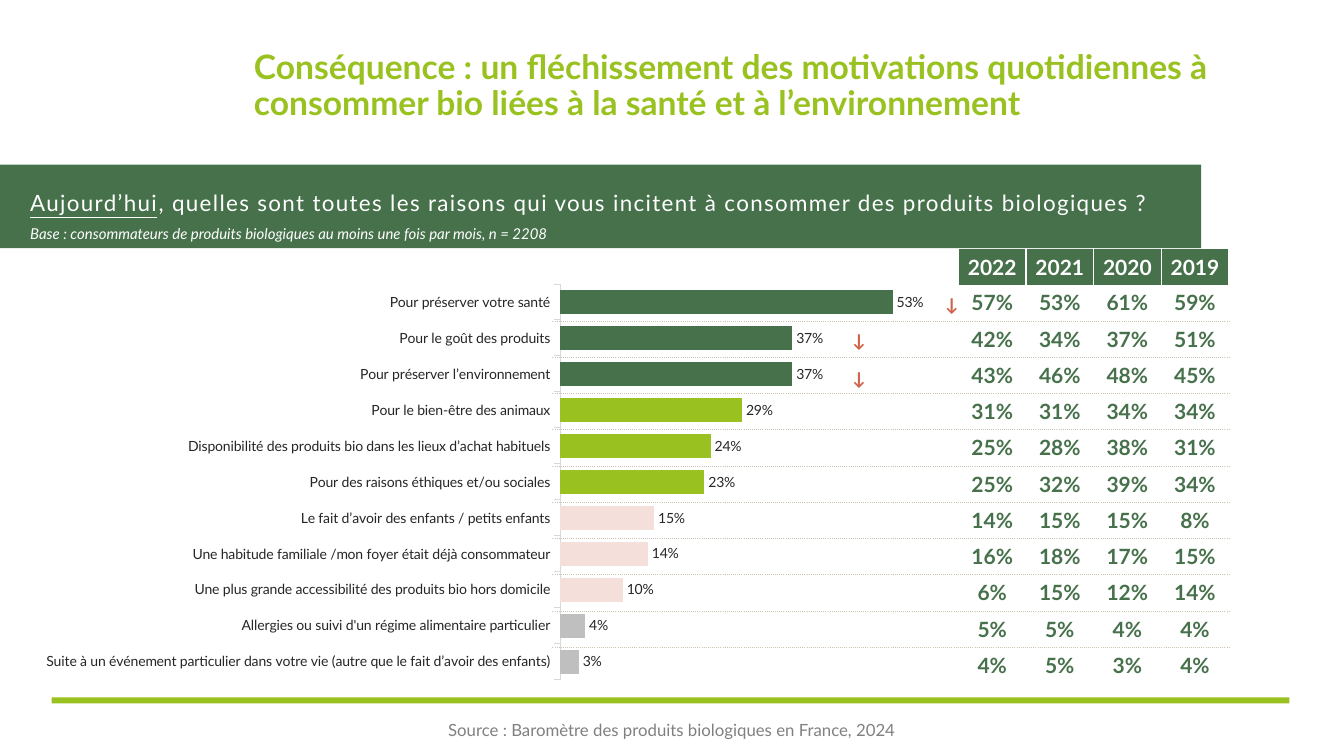
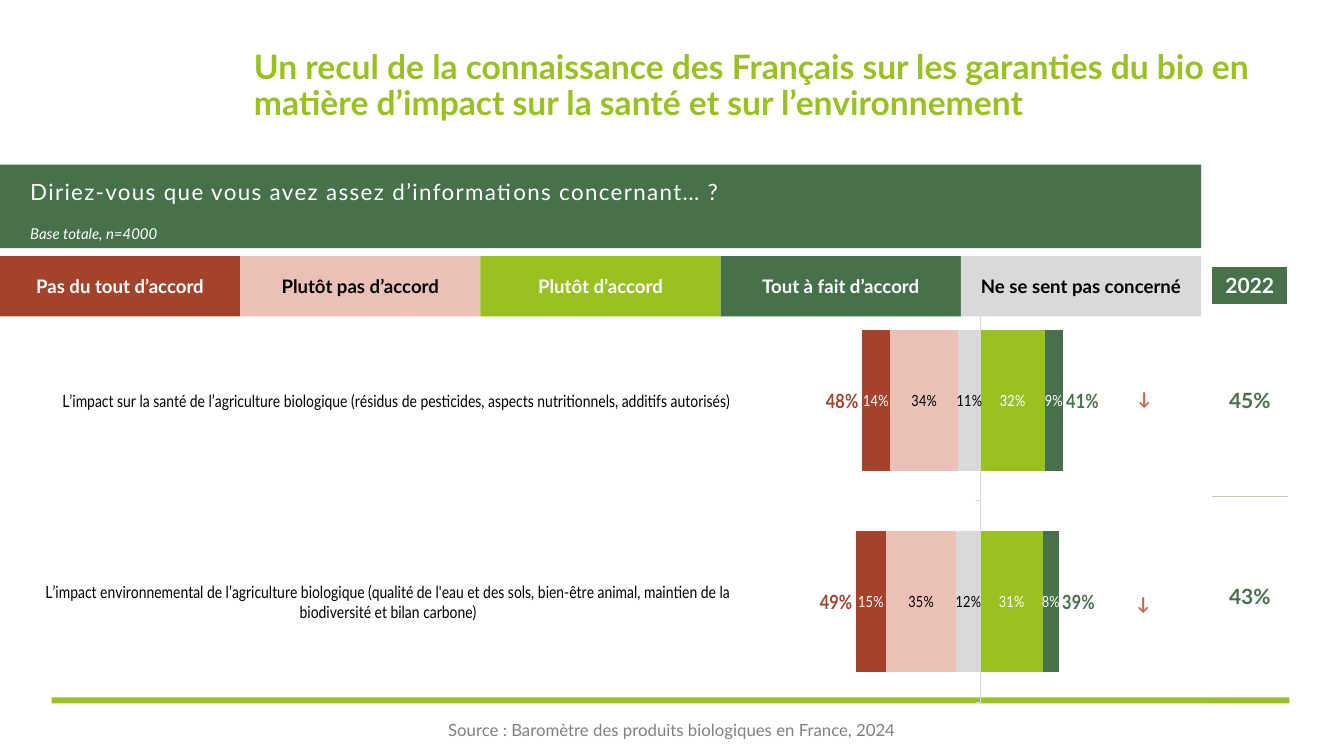
from dataclasses import dataclass
from pptx import Presentation
from pptx.chart.data import CategoryChartData as Data
from pptx.dml.color import RGBColor as RGB
from pptx.enum.chart import XL_CHART_TYPE as Kind, XL_LABEL_POSITION as Spot
from pptx.enum.chart import XL_TICK_LABEL_POSITION as Side, XL_TICK_MARK as Tick
from pptx.enum.shapes import MSO_SHAPE as Form
from pptx.enum.text import MSO_ANCHOR as Anchor, MSO_AUTO_SIZE as Fit, PP_ALIGN as Align
from pptx.oxml import parse_xml
from pptx.oxml.ns import nsdecls, qn
from pptx.util import Pt


@dataclass(frozen=True)
class Theme:
    font: str = "Lato"
    green: str = "46714B"
    lime: str = "99C221"
    rust: str = "A5422C"
    rose: str = "EBC0B6"
    blush: str = "F5DFDB"
    mist: str = "D9D9D9"
    grey: str = "BFBFBF"
    dim: str = "808080"
    ink: str = "262626"
    black: str = "000000"
    white: str = "FFFFFF"
    sand: str = "CFC3B6"
    red: str = "CE6149"
    head: float = 24
    ask: float = 16
    year: float = 15
    sum: float = 14
    tag: float = 13.3
    foot: float = 12
    bar: float = 11
    base: float = 10.7
    small: float = 10


T = Theme()


def style(font, size, hue, **more):
    font.color.rgb = RGB.from_string(hue)
    for key, val in {"name": T.font, "size": Pt(size), **more}.items():
        setattr(font, key, val)


def box(slide, area, runs=(), size=T.foot, hue=T.white, fill=None,
        align=Align.LEFT, gap=1.0, track=0, **more):
    area = [Pt(n) for n in area]
    if fill:
        shape = slide.shapes.add_shape(Form.RECTANGLE, *area)
        shape.shadow.inherit = False
        shape.fill.solid()
        shape.fill.fore_color.rgb = RGB.from_string(fill)
        shape.line.fill.background()
    else:
        shape = slide.shapes.add_textbox(*area)
    frame = shape.text_frame
    for key in ("margin_left", "margin_top", "margin_right", "margin_bottom"):
        setattr(frame, key, 0)
    frame.word_wrap = True
    frame.vertical_anchor = Anchor.MIDDLE
    para = frame.paragraphs[0]
    para.alignment = align
    para.line_spacing = gap
    for words, extra in runs:
        run = para.add_run()
        run.text = words
        style(run.font, size, hue, **{**more, **extra})
        if track:
            run.font._element.set("spc", str(track))


pages = [
    {
        "title": "Conséquence : un fléchissement des motivations quotidiennes à "
                 "consommer bio liées à la santé et à l’environnement",
        "ask": [("Aujourd’hui", {"underline": True}),
                (", quelles sont toutes les raisons qui vous incitent à "
                 "consommer des produits biologiques ?", {})],
        "top": 125.3,
        "base": "Base : consommateurs de produits biologiques au moins une fois "
                "par mois, n = 2208",
        "arrows": [(607.7, 234.7), (607.7, 262.1), (673.9, 209.5)],
        "tags": [],
        "chart": {
            "kind": Kind.BAR_CLUSTERED, "area": (0, 190.8, 689.8, 303.8),
            "plot": (0.58, 0.04, 0.39, 0.93), "low": 0, "high": 0.6,
            "gap": 50, "lap": 0, "flip": True, "side": Side.NEXT_TO_AXIS,
            "size": T.small, "ink": T.ink,
            "cats": [
                "Pour préserver votre santé",
                "Pour le goût des produits",
                "Pour préserver l’environnement",
                "Pour le bien-être des animaux",
                "Disponibilité des produits bio dans les lieux d’achat habituels",
                "Pour des raisons éthiques et/ou sociales",
                "Le fait d’avoir des enfants / petits enfants",
                "Une habitude familiale /mon foyer était déjà consommateur",
                "Une plus grande accessibilité des produits bio hors domicile",
                "Allergies ou suivi d'un régime alimentaire particulier",
                "Suite à un événement particulier dans votre vie "
                "(autre que le fait d’avoir des enfants)"],
            "rows": [
                ("2024", (0.53, 0.37, 0.37, 0.29, 0.24, 0.23, 0.15, 0.14, 0.1, 0.04, 0.03),
                 T.green, T.ink, T.small, Spot.OUTSIDE_END)],
            "hues": [T.green] * 3 + [T.lime] * 3 + [T.blush] * 3 + [T.grey] * 2,
        },
        "table": {
            "at": (394.6, 178.2), "cols": [290] + [48.3] * 4,
            "rows": [25.2] + [25.9] * 11,
            "line": (T.sand, 0.5, "sysDot"), "last": False,
            "cells": [["", "2022", "2021", "2020", "2019"]] + [
                [""] + [f"{n}%" for n in row] for row in (
                    (57, 53, 61, 59), (42, 34, 37, 51), (43, 46, 48, 45),
                    (31, 31, 34, 34), (25, 28, 38, 31), (25, 32, 39, 34),
                    (14, 15, 15, 8), (16, 18, 17, 15), (6, 15, 12, 14),
                    (5, 5, 4, 4), (4, 5, 3, 4))],
        },
    },
    {
        "title": "Un recul de la connaissance des Français sur les garanties du bio "
                 "en matière d’impact sur la santé et sur l’environnement",
        "ask": [("Diriez-vous que vous avez assez d’informations concernant… ?", {})],
        "top": 117.4,
        "base": "Base totale, n=4000",
        "arrows": [(811.4, 276.5), (810.7, 422.6)],
        "tags": [
            ("Pas du tout d’accord", T.rust, T.white),
            ("Plutôt pas d’accord", T.rose, T.black),
            ("Plutôt d’accord", T.lime, T.white),
            ("Tout à fait d’accord", T.green, T.white),
            ("Ne se sent pas concerné", T.mist, T.black)],
        "chart": {
            "kind": Kind.BAR_STACKED, "area": (32.4, 213.8, 847.4, 288),
            "plot": (0.5, 0, 0.49, 1), "low": -1.2, "high": 1.2,
            "gap": 43, "lap": 100, "flip": False, "side": Side.LOW,
            "size": T.foot, "ink": T.black,
            "cats": [
                "L’impact environnemental de l’agriculture biologique (qualité de "
                "l'eau et des sols, bien-être animal, maintien de la biodiversité "
                "et bilan carbone)",
                "L’impact sur la santé de l’agriculture biologique (résidus de "
                "pesticides, aspects nutritionnels, additifs autorisés)"],
            "rows": [
                ("Plutôt d’accord", (0.31, 0.32), T.lime, T.white, T.bar, Spot.CENTER),
                ("Tout à fait d’accord", (0.08, 0.09), T.green, T.white, T.bar, Spot.CENTER),
                ("Ne se sent pas concerné", (-0.12, -0.11), T.mist, T.black, T.bar, Spot.CENTER),
                ("Plutôt pas d’accord", (-0.35, -0.34), T.rose, T.black, T.bar, Spot.CENTER),
                ("Pas du tout d’accord", (-0.15, -0.14), T.rust, T.white, T.bar, Spot.CENTER),
                ("Total d’accord", (0.39, 0.41), None, T.green, T.sum, Spot.INSIDE_BASE),
                ("Total pas d’accord", (-0.49, -0.48), None, T.rust, T.sum, Spot.INSIDE_BASE)],
            "hues": [],
        },
        "table": {
            "at": (865.4, 191), "cols": [54.7], "rows": [26.2, 137.5, 143.3],
            "line": (T.sand, 1, "solid"), "last": True,
            "cells": [["2022"], ["45%"], ["43%"]],
        },
    },
]

deck = Presentation()
deck.slide_width, deck.slide_height = Pt(960), Pt(540)

for page in pages:
    slide = deck.slides.add_slide(deck.slide_layouts[5])
    title = slide.shapes.title
    place = {"left": 181.4, "top": 27.4, "width": 742.3, "height": 68.4}
    for key, val in place.items():
        setattr(title, key, Pt(val))
    frame = title.text_frame
    frame.text = page["title"]
    look = {"margin_left": 0, "margin_top": 0, "margin_right": 0, "margin_bottom": 0,
            "word_wrap": True, "auto_size": Fit.NONE, "vertical_anchor": Anchor.MIDDLE}
    for key, val in look.items():
        setattr(frame, key, val)
    para = frame.paragraphs[0]
    para.alignment, para.line_spacing = Align.LEFT, 0.9
    style(para.runs[0].font, T.head, T.lime, bold=True)

    box(slide, (0, 117.6, 858, 59.6), fill=T.green)
    box(slide, (36.8, 498.2, 884.2, 4.3), fill=T.lime)
    box(slide, (277.2, 502, 405.4, 38),
        [("Source : Baromètre des produits biologiques en France, 2024", {})],
        T.foot, T.dim, align=Align.CENTER)

    plan = page["chart"]
    data = Data(number_format="0%")
    data.categories = plan["cats"]
    for row in plan["rows"]:
        data.add_series(row[0], row[1])
    area = [Pt(n) for n in plan["area"]]
    chart = slide.shapes.add_chart(plan["kind"], *area, data).chart
    chart.has_title = chart.has_legend = False
    style(chart.font, T.small, plan["ink"])
    root = chart.element
    root.find(qn("c:chart")).addnext(parse_xml(
        f'<c:spPr {nsdecls("c", "a")}><a:noFill/><a:ln><a:noFill/></a:ln></c:spPr>'))
    field = root.find(".//" + qn("c:plotArea"))
    for old in field.findall(qn("c:layout")):
        field.remove(old)
    parts = "".join(f'<c:{k} val="{v}"/>' for k, v in zip("xywh", plan["plot"]))
    field.insert(0, parse_xml(
        f'<c:layout {nsdecls("c")}><c:manualLayout><c:layoutTarget val="inner"/>'
        f'<c:xMode val="edge"/><c:yMode val="edge"/>{parts}</c:manualLayout></c:layout>'))

    plot = chart.plots[0]
    bars = {"gap_width": plan["gap"], "overlap": plan["lap"], "vary_by_categories": False}
    scale = {"minimum_scale": plan["low"], "maximum_scale": plan["high"],
             "has_major_gridlines": False, "visible": False}
    names = {"reverse_order": plan["flip"], "major_tick_mark": Tick.OUTSIDE,
             "minor_tick_mark": Tick.NONE, "tick_label_position": plan["side"],
             "has_major_gridlines": False}
    axis = chart.category_axis
    for item, vals in ((plot, bars), (chart.value_axis, scale), (axis, names)):
        for key, val in vals.items():
            setattr(item, key, val)
    axis.format.line.width = Pt(0.75)
    axis.format.line.color.rgb = RGB.from_string(T.mist)
    style(axis.tick_labels.font, plan["size"], plan["ink"])

    for row, (name, vals, fill, hue, size, spot) in zip(plot.series, plan["rows"]):
        paint = row.format.fill
        if fill:
            paint.solid()
            paint.fore_color.rgb = RGB.from_string(fill)
        else:
            paint.background()
        marks = row.data_labels
        look = {"show_value": True, "number_format": "0%;0%",
                "number_format_is_linked": False, "position": spot}
        for key, val in look.items():
            setattr(marks, key, val)
        style(marks.font, size, hue, bold=not fill)
    for i, hue in enumerate(plan["hues"]):
        paint = plot.series[0].points[i].format.fill
        paint.solid()
        paint.fore_color.rgb = RGB.from_string(hue)

    for i, (words, fill, hue) in enumerate(page["tags"]):
        box(slide, (i * 171.6, 182.9, 171.6, 43.2), [(words, {})], T.tag, hue,
            fill, Align.CENTER, bold=True)

    plan = page["table"]
    cols, rows = plan["cols"], plan["rows"]
    area = [Pt(n) for n in (*plan["at"], sum(cols), sum(rows))]
    table = slide.shapes.add_table(len(rows), len(cols), *area).table
    table.first_row = table.horz_banding = False
    bare = table._tbl.tblPr.find(qn("a:tableStyleId"))
    bare.text = "{2D5ABB26-0587-4C30-8999-92F81FD0307C}"
    for col, wide in zip(table.columns, cols):
        col.width = Pt(wide)
    for r, tall in enumerate(rows):
        table.rows[r].height = Pt(tall)
        for c, words in enumerate(plan["cells"][r]):
            cell = table.cell(r, c)
            look = {"margin_left": 0, "margin_top": 0, "margin_right": 0,
                    "margin_bottom": 0, "vertical_anchor": Anchor.MIDDLE}
            for key, val in look.items():
                setattr(cell, key, val)
            cell.fill.background()
            edges = []
            if r == 0 and words:
                cell.fill.solid()
                cell.fill.fore_color.rgb = RGB.from_string(T.green)
                edges = [(side, T.white, 1, "solid") for side in ("lnL", "lnR")]
            elif r and (plan["last"] or r < len(rows) - 1):
                edges = [("lnB", *plan["line"])]
            for i, (side, hue, thick, dash) in enumerate(edges):
                cell._tc.get_or_add_tcPr().insert(i, parse_xml(
                    f'<a:{side} {nsdecls("a")} w="{Pt(thick)}"><a:solidFill>'
                    f'<a:srgbClr val="{hue}"/></a:solidFill>'
                    f'<a:prstDash val="{dash}"/></a:{side}>'))
            if words:
                para = cell.text_frame.paragraphs[0]
                para.alignment = Align.CENTER
                run = para.add_run()
                run.text = words
                style(run.font, T.year, T.green if r else T.white, bold=True)

    box(slide, (21.6, page["top"], 836.4, 41.8), page["ask"], T.ask, gap=0.9, track=100)
    box(slide, (21.6, 160.6, 836.4, 14.4), [(page["base"], {})], T.base, gap=0.9, italic=True)
    for left, top in page["arrows"]:
        box(slide, (left, top, 14.4, 15.8), [("↓", {})], T.tag, T.red,
            name="Calibri", bold=True)

deck.save("out.pptx")
